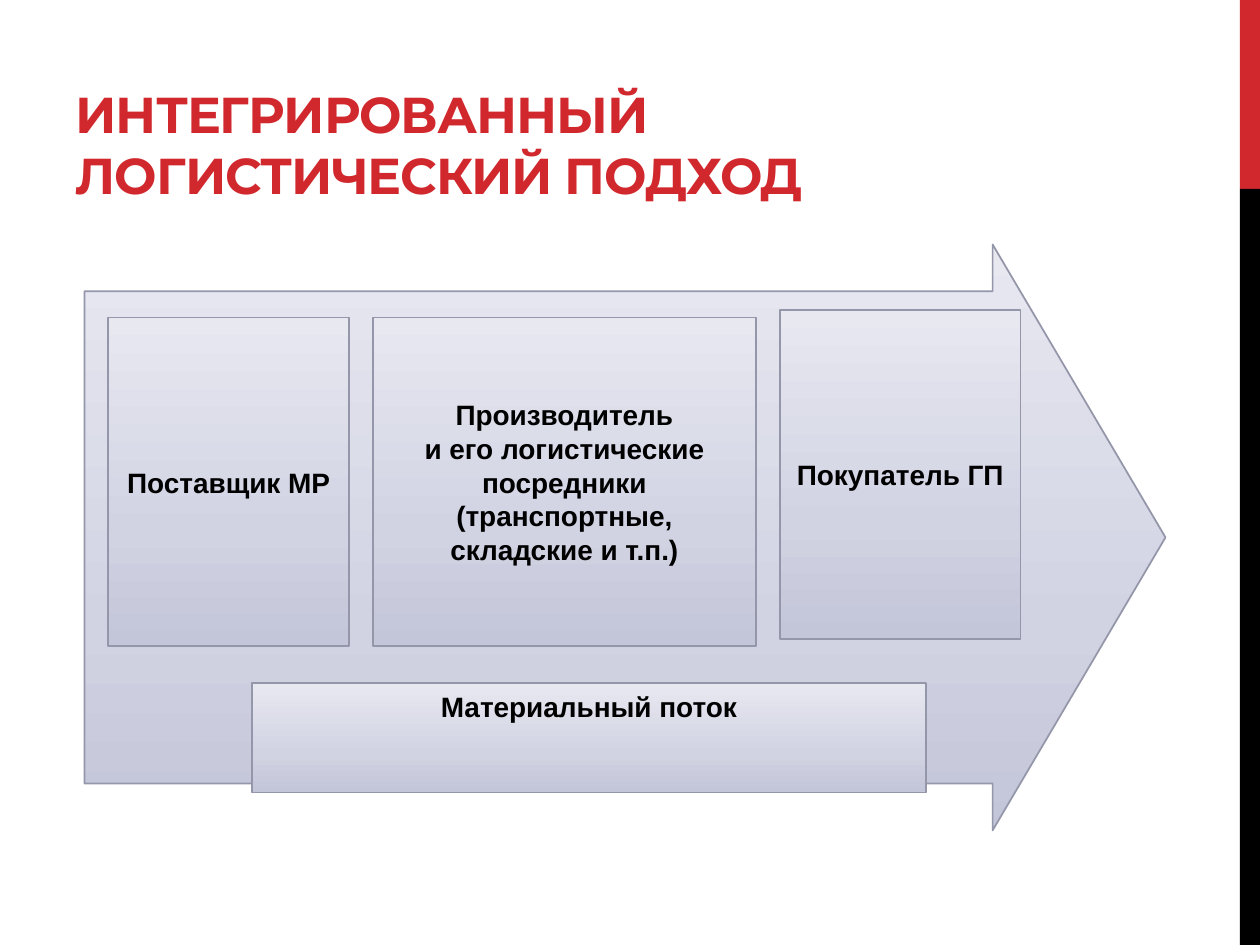
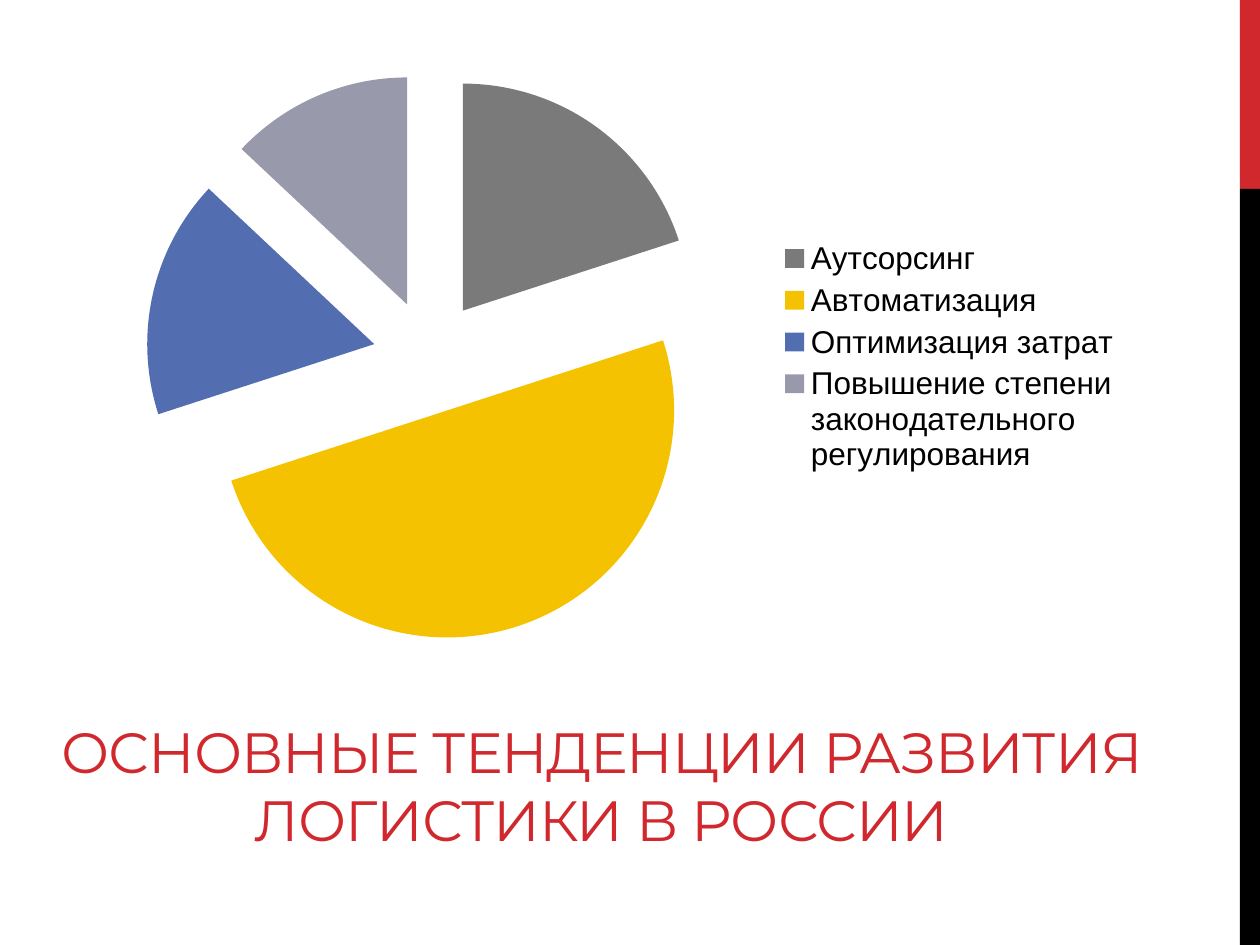
from copy import deepcopy
from dataclasses import dataclass

from lxml import etree
from pptx import Presentation
from pptx import util as u
from pptx.chart.data import CategoryChartData
from pptx.dml.color import RGBColor
from pptx.enum import chart as charts, shapes, text
from pptx.oxml.ns import qn

PX = u.Inches(1) // 100  # 100 px to the inch
SLIDE_W, SLIDE_H = 1000, 750


@dataclass(frozen=True)
class Theme:
    red: str = "D1282E"
    black: str = "000000"
    outline: str = "9496A9"
    gradient: tuple = ((0, "C3C5D9"), (0.35, "D1D3E3"), (1, "E8E8F1"))
    slices: tuple = ("7A7A7A", "F5C201", "526DB0", "989AAC")
    title_font: str = "Montserrat"
    body_font: str = "Arial"
    stage_size: float = 16
    legend_size: float = 18


THEME = Theme()


def rgb(value):
    return RGBColor.from_string(value)


def emu(box):
    return [length * PX for length in box]


def write(frame, content, *, size, font, color=THEME.black, bold=False,
          align=text.PP_ALIGN.CENTER, anchor=text.MSO_ANCHOR.MIDDLE, spacing=None):
    """Fill a text frame, one paragraph per line of content."""
    frame.text = content
    frame.word_wrap = True
    frame.auto_size = text.MSO_AUTO_SIZE.NONE
    frame.vertical_anchor = anchor
    for paragraph in frame.paragraphs:
        paragraph.alignment = align
        for run in paragraph.runs:
            run.font.size = u.Pt(size)
            run.font.name = font
            run.font.bold = bold
            run.font.color.rgb = rgb(color)
            if spacing is not None:
                run.font._element.set("spc", str(round(spacing * 100)))


def add_block(slide, kind, box, color=None):
    """Preset shape: plain if a colour is given, else outlined gradient."""
    block = slide.shapes.add_shape(kind, *emu(box))
    block.shadow.inherit = False
    if color:
        block.fill.solid()
        block.fill.fore_color.rgb = rgb(color)
        block.line.fill.background()
        return block
    block.fill.gradient()
    block.fill.gradient_angle = 90
    first_stop = block._element.spPr.find(".//" + qn("a:gs"))
    first_stop.addnext(deepcopy(first_stop))
    for stop, (position, shade) in zip(block.fill.gradient_stops, THEME.gradient):
        stop.position = position
        stop.color.rgb = rgb(shade)
    block.line.color.rgb = rgb(THEME.outline)
    block.line.width = u.Pt(1)
    return block


def add_side_band(slide, box):
    left, top, width, height = box
    red_height = height // 5
    rect = shapes.MSO_SHAPE.RECTANGLE
    add_block(slide, rect, (left, top, width, red_height), THEME.red)
    add_block(slide, rect, (left, top + red_height, width, height - red_height),
              THEME.black)


def add_titled_slide(deck, title, box, **title_format):
    slide = deck.slides.add_slide(deck.slide_layouts[5])  # title only
    add_side_band(slide, (984, 0, SLIDE_W - 984, SLIDE_H))
    heading = slide.shapes.title
    heading.left, heading.top, heading.width, heading.height = emu(box)
    write(heading.text_frame, title, font=THEME.title_font, color=THEME.red,
          anchor=text.MSO_ANCHOR.BOTTOM, spacing=-0.6, **title_format)
    return slide


def add_supply_arrow(slide, box):
    left, top, _, _ = box
    arrow = add_block(slide, shapes.MSO_SHAPE.RIGHT_ARROW, box)
    arrow.adjustments[0], arrow.adjustments[1] = 0.84, 0.295

    def add_stage(content, stage_box, anchor=text.MSO_ANCHOR.MIDDLE):
        stage = add_block(slide, shapes.MSO_SHAPE.RECTANGLE, stage_box)
        write(stage.text_frame, content, size=THEME.stage_size,
              font=THEME.body_font, bold=True, anchor=anchor)

    # Stages of the chain, left to right with equal gaps
    gap, stage_height = 19, 261
    stages = (
        ("Поставщик МР", 191, 58),
        ("Производитель\nи его логистические посредники "
         "(транспортные, складские и т.п.)", 304, 58),
        ("Покупатель ГП", 191, 52),
    )
    stage_left = left + gap
    for content, width, drop in stages:
        add_stage(content, (stage_left, top + drop, width, stage_height))
        stage_left += width + gap

    # Flow that runs under all stages
    add_stage("Материальный поток", (left + 133, top + 348, 535, 87),
              text.MSO_ANCHOR.TOP)


def add_trend_pie(slide, box):
    trends = CategoryChartData()
    trends.categories = ("Аутсорсинг", "Автоматизация", "Оптимизация затрат",
                         "Повышение степени законодательного регулирования")
    trends.add_series("Series 1", (20, 50, 17, 13))
    pie = slide.shapes.add_chart(charts.XL_CHART_TYPE.PIE, *emu(box), trends).chart
    pie.has_title = False
    pie.font.size = u.Pt(THEME.legend_size)
    pie.font.name = THEME.body_font
    pie.font.color.rgb = rgb(THEME.black)
    pie.has_legend = True
    pie.legend.position = charts.XL_LEGEND_POSITION.RIGHT
    pie.legend.include_in_layout = False

    # Coloured slices, pulled apart
    plot = pie.plots[0]
    plot.vary_by_categories = True
    shares = plot.series[0]
    for index, color in enumerate(THEME.slices):
        fill = shares.points[index].format.fill
        fill.solid()
        fill.fore_color.rgb = rgb(color)
    explosion = etree.Element(qn("c:explosion"), val="25")
    shares._element.find(qn("c:tx")).addnext(explosion)


def main():
    deck = Presentation()
    deck.slide_width, deck.slide_height = SLIDE_W * PX, SLIDE_H * PX

    approach = add_titled_slide(deck, "ИНТЕГРИРОВАННЫЙ ЛОГИСТИЧЕСКИЙ ПОДХОД",
                                (50, 17, 633, 150), size=28.8, bold=True,
                                align=text.PP_ALIGN.LEFT)
    add_supply_arrow(approach, (67, 194, 858, 465))

    tendencies = add_titled_slide(deck, "ОСНОВНЫЕ ТЕНДЕНЦИИ РАЗВИТИЯ ЛОГИСТИКИ В РОССИИ",
                                  (-3, 532, 961, 150), size=32.4)
    add_trend_pie(tendencies, (67, 44, 833, 478))

    deck.save("out.pptx")


if __name__ == "__main__":
    main()
